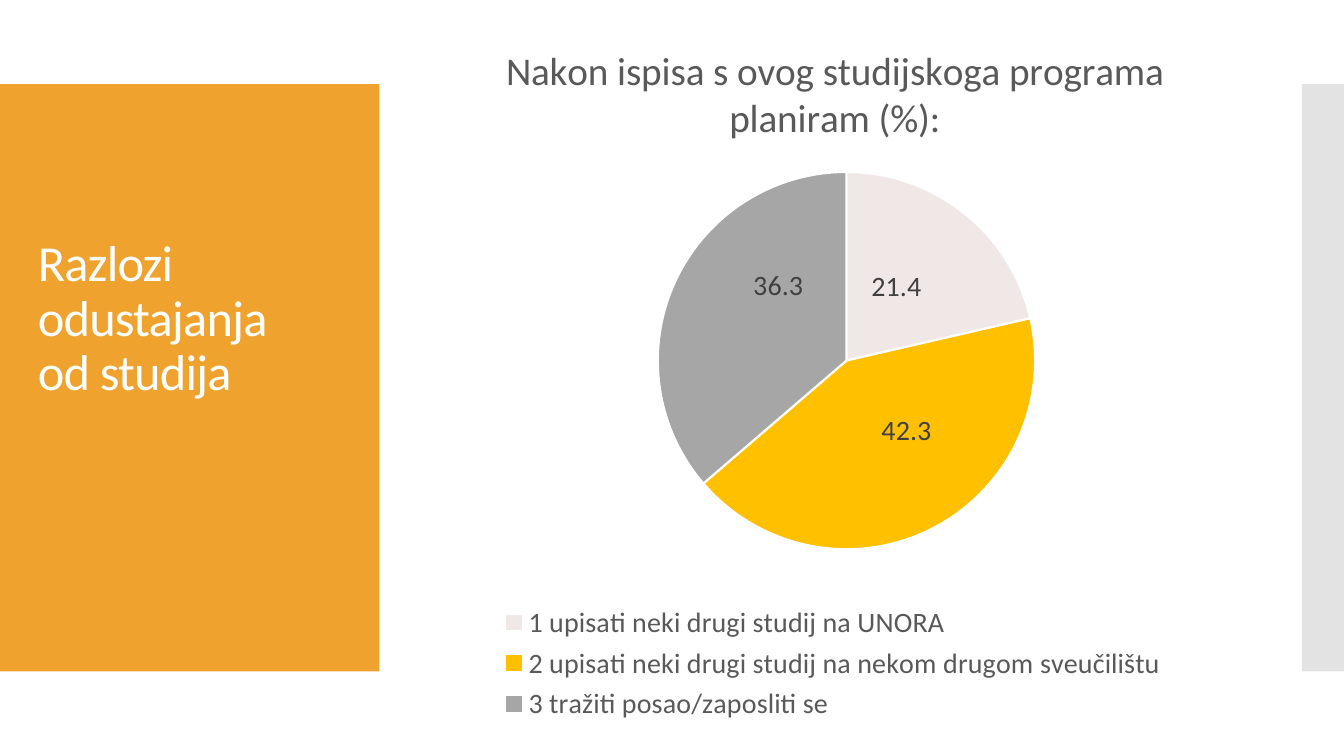
from lxml import etree
from pptx import Presentation
from pptx import util as u
from pptx.chart import data as chart_data
from pptx.dml import color
from pptx.enum import chart as charts, shapes, text
from pptx.oxml import ns

FONT = "Calibri"
GREY_TEXT = "595959"
HEADING = "Razlozi\vodustajanja\vod studija"
CHART_TITLE = "Nakon ispisa s ovog studijskoga programa planiram (%):"
# Answer, percentage, slice colour, label shift as fractions of the chart
ANSWERS = [
    ("1 upisati neki drugi studij na UNORA", 21.4, "F0E8E6", (-0.01, 0)),
    ("2 upisati neki drugi studij na nekom drugom sveučilištu", 42.3, "FFC000", (0.02, -0.02)),
    ("3 tražiti posao/zaposliti se", 36.3, "A6A6A6", (0.02, -0.05)),
]


def rgb(value):
    return color.RGBColor.from_string(value)


def format_font(font, size, hex_color):
    values = {"name": FONT, "size": u.Pt(size), "bold": False}
    for name, value in values.items():
        setattr(font, name, value)
    font.color.rgb = rgb(hex_color)


def add_panel(slide, box, hex_color, opacity=100):
    """Plain rectangle without outline."""
    shape = slide.shapes.add_shape(shapes.MSO_SHAPE.RECTANGLE, *map(u.Pt, box))
    shape.shadow.inherit = False
    shape.fill.solid()
    shape.fill.fore_color.rgb = rgb(hex_color)
    shape.line.fill.background()
    if opacity < 100:
        fill = shape.element.spPr.find(ns.qn("a:solidFill"))
        etree.SubElement(fill[0], ns.qn("a:alpha"), val=str(opacity * 1000))


def add_heading(slide, box):
    """Orange panel with the slide heading in its upper part."""
    left, top, width, height = box
    add_panel(slide, box, "F0A22E")
    heading = slide.shapes.add_textbox(
        *map(u.Pt, (left + 20, top + 106, width - 40, 125)))
    frame = heading.text_frame
    frame.word_wrap = True
    frame.vertical_anchor = text.MSO_ANCHOR.MIDDLE
    paragraph = frame.paragraphs[0]
    paragraph.text = HEADING
    paragraph.line_spacing = 0.9
    for run in paragraph.runs:
        format_font(run.font, 36, "FFFFFF")
        run.font._element.set("spc", "-60")


def set_layout(element, after=None, inner=False, edge=True, **places):
    """Place a chart part by fractions of the chart's size."""
    for old in element.findall(ns.qn("c:layout")):
        element.remove(old)
    layout = etree.Element(ns.qn("c:layout"))
    manual = etree.SubElement(layout, ns.qn("c:manualLayout"))
    settings = {"layoutTarget": "inner"} if inner else {}
    if edge:
        settings.update(xMode="edge", yMode="edge")
    settings.update(places)
    for name, value in settings.items():
        etree.SubElement(manual, ns.qn("c:" + name), val=str(value))
    if after:
        element.find(ns.qn(after)).addnext(layout)
    else:
        element.insert(0, layout)


def add_pie(slide, box):
    """Pie chart with title above and legend below."""
    answers = chart_data.CategoryChartData()
    answers.categories = [answer[0] for answer in ANSWERS]
    answers.add_series("Series 1", [answer[1] for answer in ANSWERS])
    chart = slide.shapes.add_chart(
        charts.XL_CHART_TYPE.PIE, *map(u.Pt, box), answers).chart
    format_font(chart.font, 10, "000000")

    # Title
    chart.has_title = True
    title = chart.chart_title
    title.include_in_layout = False
    title.text_frame.text = CHART_TITLE
    format_font(title.text_frame.paragraphs[0].runs[0].font, 28, GREY_TEXT)
    set_layout(title._element, after="c:tx", x=0.12, y=0.03)

    # Legend
    chart.has_legend = True
    legend = chart.legend
    legend.position = charts.XL_LEGEND_POSITION.BOTTOM
    legend.include_in_layout = False
    format_font(legend.font, 20, GREY_TEXT)
    set_layout(legend._element, after="c:legendPos", x=0.12, y=0.82, w=0.76, h=0.18)

    # Slices and their labels
    plot = chart.plots[0]
    plot.vary_by_categories = True
    set_layout(plot._element.getparent(), inner=True, x=0.3, y=0.22, w=0.43, h=0.53)
    for index, (_, _, hex_color, (shift_x, shift_y)) in enumerate(ANSWERS):
        point = plot.series[0].points[index]
        point.format.fill.solid()
        point.format.fill.fore_color.rgb = rgb(hex_color)
        point.format.line.color.rgb = rgb("FFFFFF")
        point.format.line.width = u.Pt(1.5)
        label = point.data_label
        format_font(label.font, 20, "404040")
        label.position = charts.XL_LABEL_POSITION.CENTER
        set_layout(label._dLbl, after="c:idx", edge=False, x=shift_x, y=shift_y)


def main():
    presentation = Presentation()
    presentation.slide_width, presentation.slide_height = u.Pt(960), u.Pt(540)
    slide = presentation.slides.add_slide(presentation.slide_layouts[6])
    add_heading(slide, (0, 60, 271, 419.5))
    add_panel(slide, (930, 60, 30, 419.5), "C8C8C8", opacity=50)
    add_pie(slide, (281, 11, 628.5, 508.5))
    presentation.save("out.pptx")


if __name__ == "__main__":
    main()
